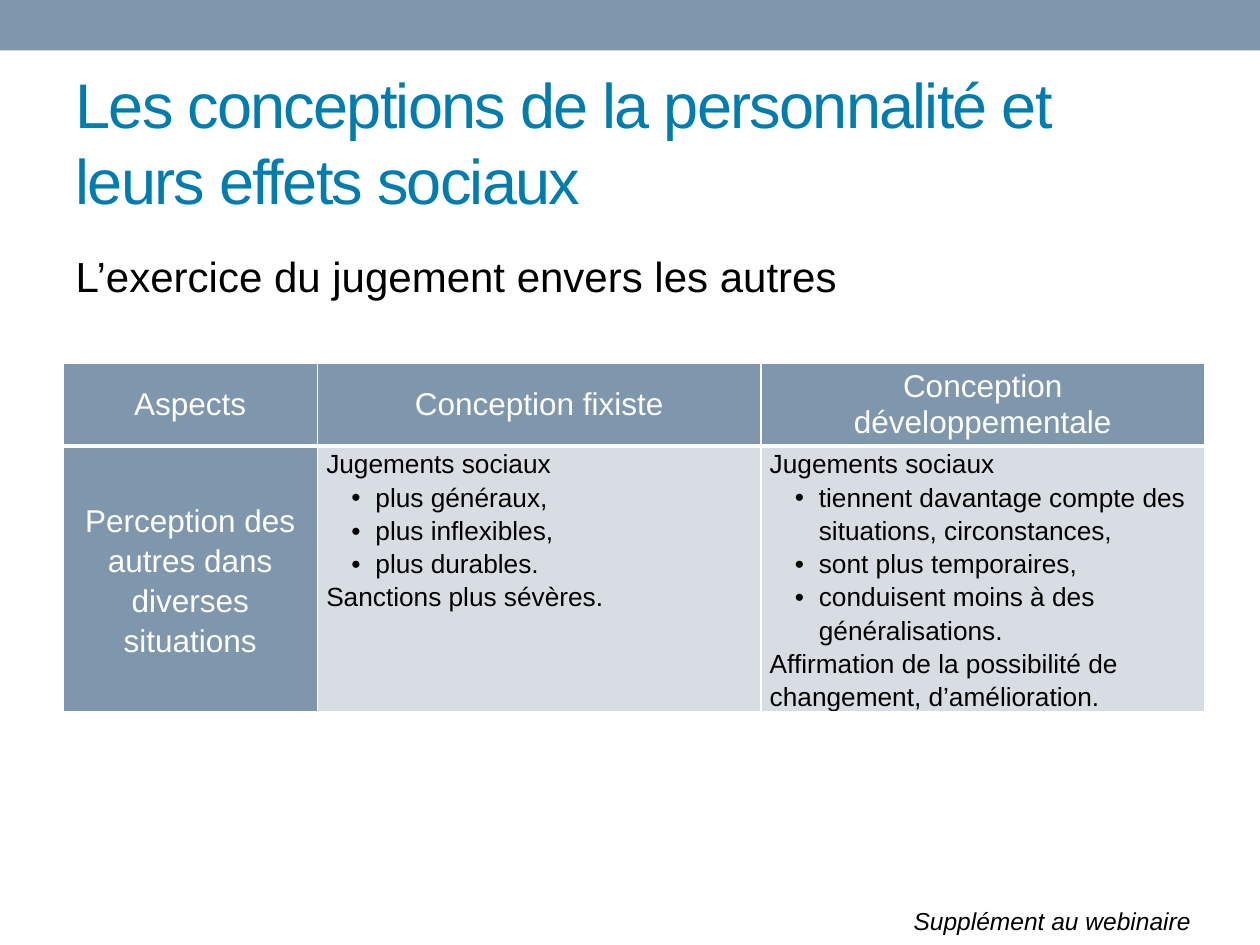
from dataclasses import dataclass

from lxml.etree import SubElement
from pptx import Presentation
from pptx.dml.color import RGBColor
from pptx.enum.shapes import MSO_SHAPE
from pptx.enum.text import MSO_ANCHOR, MSO_AUTO_SIZE, PP_ALIGN
from pptx.oxml.ns import qn
from pptx.util import Inches, Pt

SLATE, PALE, BLUE = "7E97AD", "D8DDE3", "007CAF"
WHITE, BLACK = "FFFFFF", "000000"
BULLET = "• "


@dataclass
class CellStyle:
    fill: str
    color: str
    size: int
    align: PP_ALIGN
    anchor: MSO_ANCHOR
    spacing: float | None = None
    side_margin: float = 0.1
    end_margin: float = 0.05
    bottom_line: float = 1


HEADER = CellStyle(SLATE, WHITE, 18, PP_ALIGN.CENTER, MSO_ANCHOR.MIDDLE,
                   bottom_line=3)
ASPECT = CellStyle(SLATE, WHITE, 18, PP_ALIGN.CENTER, MSO_ANCHOR.MIDDLE,
                   1.14, 0.07, 0)
DETAIL = CellStyle(PALE, BLACK, 15, PP_ALIGN.LEFT, MSO_ANCHOR.TOP,
                   1.14, 0.07, 0)

COLUMN_WIDTHS = (2.02, 3.52, 3.52)
ROW_HEIGHTS = (0.61, 1.44)
CONCEPTIONS = (
    (
        (HEADER, ["Aspects"]),
        (HEADER, ["Conception fixiste"]),
        (HEADER, ["Conception développementale"]),
    ),
    (
        (ASPECT, ["Perception des autres dans diverses situations"]),
        (DETAIL, ["Jugements sociaux",
                  "• plus généraux,",
                  "• plus inflexibles,",
                  "• plus durables.",
                  "Sanctions plus sévères."]),
        (DETAIL, ["Jugements sociaux",
                  "• tiennent davantage compte des situations, circonstances,",
                  "• sont plus temporaires,",
                  "• conduisent moins à des généralisations.",
                  "Affirmation de la possibilité de changement, d’amélioration."]),
    ),
)


def rgb(color: str) -> RGBColor:
    return RGBColor.from_string(color)


def place(shape, left: float, top: float, width: float, height: float) -> None:
    shape.left, shape.top = Inches(left), Inches(top)
    shape.width, shape.height = Inches(width), Inches(height)


def set_bullet(paragraph, char: str | None, left: float = 0,
               hanging: float = 0) -> None:
    properties = paragraph._p.get_or_add_pPr()
    properties.set("marL", str(Inches(left)))
    properties.set("indent", str(-Inches(hanging)))
    if char:
        SubElement(properties, qn("a:buFont"), typeface="Arial")
        SubElement(properties, qn("a:buChar"), char=char)
    else:
        SubElement(properties, qn("a:buNone"))


def write(paragraph, text: str, *, size: int, color: str = BLACK,
          align: PP_ALIGN = PP_ALIGN.LEFT, italic: bool = False,
          spacing: float | None = None, before: float = 0,
          tracking: float = 0) -> None:
    paragraph.alignment = align
    paragraph.line_spacing = spacing
    paragraph.space_before = Pt(before)
    bulleted = text.startswith(BULLET)
    run = paragraph.add_run()
    run.text = text.removeprefix(BULLET)
    run.font.name = "Arial"
    run.font.size = Pt(size)
    run.font.bold = False
    run.font.italic = italic
    run.font.color.rgb = rgb(color)
    if tracking:
        run._r.get_or_add_rPr().set("spc", str(round(tracking * 100)))
    if bulleted:
        set_bullet(paragraph, "•", left=0.39, hanging=0.19)
    else:
        set_bullet(paragraph, None)


def set_borders(cell, bottom_line: float) -> None:
    properties = cell._tc.get_or_add_tcPr()
    widths = {"a:lnL": 1, "a:lnR": 1, "a:lnT": 1, "a:lnB": bottom_line}
    # Border lines come before the fill in the cell properties
    for position, (tag, width) in enumerate(widths.items()):
        line = SubElement(properties, qn(tag), w=str(Pt(width)))
        fill = SubElement(line, qn("a:solidFill"))
        SubElement(fill, qn("a:srgbClr"), val=WHITE)
        properties.insert(position, line)


def fill_cell(cell, style: CellStyle, lines: list[str]) -> None:
    cell.fill.solid()
    cell.fill.fore_color.rgb = rgb(style.fill)
    cell.vertical_anchor = style.anchor
    cell.margin_left = cell.margin_right = Inches(style.side_margin)
    cell.margin_top = cell.margin_bottom = Inches(style.end_margin)
    frame = cell.text_frame
    for index, line in enumerate(lines):
        paragraph = frame.add_paragraph() if index else frame.paragraphs[0]
        write(paragraph, line, size=style.size, color=style.color,
              align=style.align, spacing=style.spacing)
    set_borders(cell, style.bottom_line)


def add_conceptions(slide, left: float, top: float) -> None:
    table = slide.shapes.add_table(
        len(ROW_HEIGHTS), len(COLUMN_WIDTHS), Inches(left), Inches(top),
        Inches(sum(COLUMN_WIDTHS)), Inches(sum(ROW_HEIGHTS))).table
    for column, width in zip(table.columns, COLUMN_WIDTHS):
        column.width = Inches(width)
    for row, height, contents in zip(table.rows, ROW_HEIGHTS, CONCEPTIONS):
        row.height = Inches(height)
        for cell, (style, lines) in zip(row.cells, contents):
            fill_cell(cell, style, lines)


def main() -> None:
    presentation = Presentation()
    presentation.slide_width = Inches(10)
    presentation.slide_height = Inches(7.5)
    slide = presentation.slides.add_slide(presentation.slide_layouts[1])

    # Top band
    band = slide.shapes.add_shape(MSO_SHAPE.RECTANGLE, 0, 0,
                                  presentation.slide_width, Inches(0.4))
    band.shadow.inherit = False
    band.fill.solid()
    band.fill.fore_color.rgb = rgb(SLATE)
    band.line.fill.background()

    # Title and subtitle
    title, subtitle = slide.placeholders
    place(title, 0.5, 0.58, 9, 1.08)
    title.text_frame.vertical_anchor = MSO_ANCHOR.MIDDLE
    title.text_frame.auto_size = MSO_AUTO_SIZE.NONE
    write(title.text_frame.paragraphs[0],
          "Les conceptions de la personnalité et leurs effets sociaux",
          size=36, color=BLUE, tracking=-1)
    place(subtitle, 0.5, 1.94, 9, 5.33)
    write(subtitle.text_frame.paragraphs[0],
          "L’exercice du jugement envers les autres", size=24, before=4.8)

    # Comparison of the two conceptions
    add_conceptions(slide, 0.5, 2.88)

    # Footer note
    footer = slide.shapes.add_textbox(Inches(3.49), Inches(7.14),
                                      Inches(6.06), Inches(0.34))
    footer.text_frame.word_wrap = True
    footer.text_frame.auto_size = MSO_AUTO_SIZE.SHAPE_TO_FIT_TEXT
    write(footer.text_frame.paragraphs[0], "Supplément au webinaire",
          size=14, align=PP_ALIGN.RIGHT, italic=True)

    presentation.save("out.pptx")


if __name__ == "__main__":
    main()
